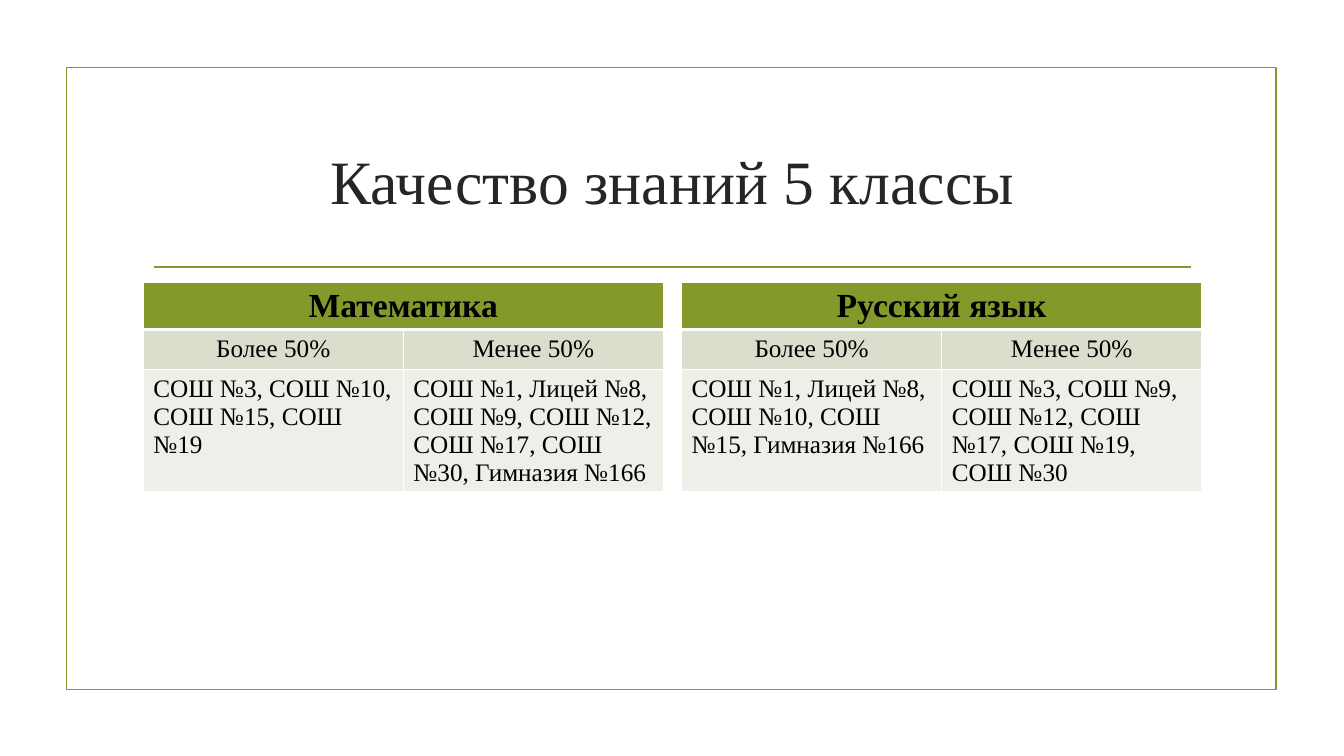
import pptx
import pptx.util
import pptx.dml.color
import pptx.enum.shapes
import pptx.enum.text
import pptx.oxml
import pptx.oxml.ns
from lxml import etree

Inches = pptx.util.Inches
Pt = pptx.util.Pt
RGBColor = pptx.dml.color.RGBColor
ALIGN = pptx.enum.text.PP_ALIGN
MIDDLE = pptx.enum.text.MSO_ANCHOR.MIDDLE
qn = pptx.oxml.ns.qn

TITLE = "Качество знаний 5 классы"
HEADS = ("Более 50%", "Менее 50%")
TABLES = [
    ("Математика",
     ("СОШ №3, СОШ №10, СОШ №15, СОШ №19",
      "СОШ №1, Лицей №8, СОШ №9, СОШ №12, СОШ №17, СОШ №30, Гимназия №166")),
    ("Русский язык",
     ("СОШ №1, Лицей №8, СОШ №10, СОШ №15, Гимназия №166",
      "СОШ №3, СОШ №9, СОШ №12, СОШ №17, СОШ №19, СОШ №30")),
]

FONT = "Times New Roman"
GREEN = RGBColor(0x83, 0x99, 0x2A)
SAGE = RGBColor(0xD9, 0xDE, 0xCD)
PALE = RGBColor(0xED, 0xEF, 0xE8)
WHITE = RGBColor(0xFF, 0xFF, 0xFF)
BLACK = RGBColor(0, 0, 0)
DARK = RGBColor(0x26, 0x26, 0x26)

LEFT, TOP = 1.42, 2.8
COL, STEP = 2.58, 5.34
ROWS = (0.46, 0.4, 1.21)
FILLS = (GREEN, SAGE, PALE)
RULES = (1, 3, 1, 1)


def write(frame, text, size=18, bold=False, color=BLACK, align=ALIGN.CENTER):
    para = frame.paragraphs[0]
    para.alignment = align
    run = para.add_run()
    run.text = text
    font = run.font
    font.name, font.size, font.bold = FONT, Pt(size), bold
    font.color.rgb = color


def edge(cell, side, width):
    props = cell._tc.get_or_add_tcPr()
    line = etree.SubElement(props, qn("a:ln" + side), w=str(Pt(width)))
    fill = etree.SubElement(line, qn("a:solidFill"))
    etree.SubElement(fill, qn("a:srgbClr"), val=str(WHITE))


def add_grid(slide, left, name, lists):
    frame = slide.shapes.add_table(
        3, 2, Inches(left), Inches(TOP), Inches(2 * COL), Inches(sum(ROWS)))
    grid = frame.table
    for col in grid.columns:
        col.width = Inches(COL)
    for i, high in enumerate(ROWS):
        grid.rows[i].height = Inches(high)
        for j in range(2):
            cell = grid.cell(i, j)
            sides = (("L", 1), ("R", 1), ("T", RULES[i]), ("B", RULES[i + 1]))
            for side, width in sides:
                edge(cell, side, width)
            cell.fill.solid()
            cell.fill.fore_color.rgb = FILLS[i]
    grid.cell(0, 0).merge(grid.cell(0, 1))
    write(grid.cell(0, 0).text_frame, name, size=24, bold=True)
    for j in range(2):
        write(grid.cell(1, j).text_frame, HEADS[j])
        write(grid.cell(2, j).text_frame, lists[j], align=ALIGN.LEFT)


def main():
    deck = pptx.Presentation()
    deck.slide_width, deck.slide_height = Inches(13.33), Inches(7.5)
    slide = deck.slides.add_slide(deck.slide_layouts[5])
    slide.background.fill.solid()
    slide.background.fill.fore_color.rgb = WHITE

    border = slide.shapes.add_shape(
        pptx.enum.shapes.MSO_SHAPE.RECTANGLE,
        Inches(0.66), Inches(0.67), Inches(12), Inches(6.17))
    border.shadow.inherit = False
    border.fill.background()
    rule = slide.shapes.add_connector(
        pptx.enum.shapes.MSO_CONNECTOR.STRAIGHT,
        Inches(1.53), Inches(2.65), Inches(11.81), Inches(2.65))
    for shape in (border, rule):
        shape.line.color.rgb = GREEN
        shape.line.width = Pt(1.25)
    etree.SubElement(rule._element.spPr, qn("a:effectLst"))

    title = slide.shapes.title
    title.left, title.top = Inches(LEFT), Inches(1.07)
    title.width, title.height = Inches(10.5), Inches(1.43)
    title.text_frame.vertical_anchor = MIDDLE
    write(title.text_frame, TITLE, size=44, color=DARK)

    for i, (name, lists) in enumerate(TABLES):
        add_grid(slide, LEFT + i * STEP, name, lists)
    deck.save("out.pptx")


if __name__ == "__main__":
    main()
